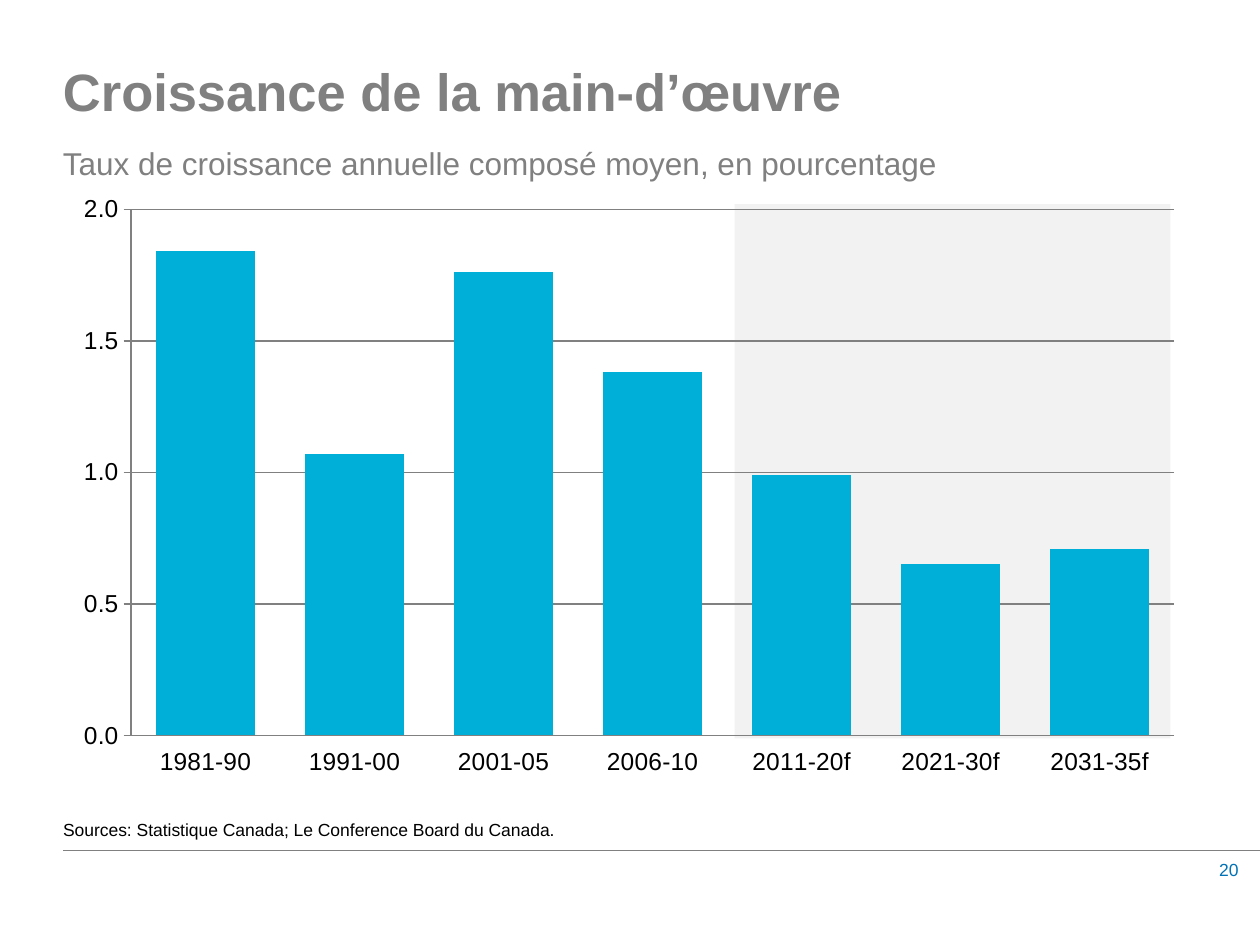
from pptx import Presentation
from pptx.chart.data import CategoryChartData
from pptx.dml.color import RGBColor
from pptx.enum.chart import XL_CHART_TYPE, XL_TICK_LABEL_POSITION, XL_TICK_MARK
from pptx.enum.shapes import MSO_CONNECTOR, MSO_SHAPE
from pptx.enum.text import MSO_ANCHOR, PP_ALIGN
from pptx.oxml import parse_xml
from pptx.oxml.ns import nsdecls
from pptx.util import Inches, Pt

GREY = "808080"
BLACK = "000000"
CATEGORIES = ["1981-90", "1991-00", "2001-05", "2006-10", "2011-20f", "2021-30f", "2031-35f"]
GROWTH = [1.84, 1.07, 1.76, 1.38, 0.99, 0.65, 0.71]


def rgb(value):
    """Turn a hex string into a colour."""
    return RGBColor.from_string(value)


def set_font(font, size, color, bold=False):
    """Format a font."""
    font.name = "Arial"
    font.size = Pt(size)
    font.bold = bold
    font.color.rgb = rgb(color)


def set_line(line, color=GREY, width=0.75):
    """Format a line."""
    line.color.rgb = rgb(color)
    line.width = Pt(width)


def add_run(p, text, size, color, bold=False):
    """Add a formatted run to a paragraph."""
    r = p.add_run()
    r.text = text
    set_font(r.font, size, color, bold)


def add_text(slide, box, text, size=10, color=BLACK, bold=False, align=PP_ALIGN.LEFT, spacing=None):
    """Add a text box without margins and return its paragraph."""
    tf = slide.shapes.add_textbox(*map(Inches, box)).text_frame
    tf.word_wrap = True
    tf.vertical_anchor = MSO_ANCHOR.TOP
    tf.margin_left = tf.margin_right = tf.margin_top = tf.margin_bottom = 0
    p = tf.paragraphs[0]
    p.alignment = align
    p.line_spacing = spacing
    add_run(p, text, size, color, bold)
    return p


def add_rule(slide, x1, x2, y):
    """Add a horizontal rule."""
    cn = slide.shapes.add_connector(MSO_CONNECTOR.STRAIGHT, Inches(x1), Inches(y), Inches(x2), Inches(y))
    set_line(cn.line)
    cn._element.spPr.append(parse_xml(f"<a:effectLst {nsdecls('a')}/>"))


def add_band(slide, box, color):
    """Add a plain filled rectangle."""
    sp = slide.shapes.add_shape(MSO_SHAPE.RECTANGLE, *map(Inches, box))
    sp.shadow.inherit = False
    sp.fill.solid()
    sp.fill.fore_color.rgb = rgb(color)
    sp.line.fill.background()


def clear_background(chart, x, y, w, h):
    """Make the chart see-through and place its plot area by fractions."""
    no_fill = f"<c:spPr {nsdecls('c', 'a')}><a:noFill/><a:ln><a:noFill/></a:ln></c:spPr>"
    root = chart._chartSpace
    root.chart.addnext(parse_xml(no_fill))
    area = root.chart.plotArea
    area.append(parse_xml(no_fill))
    for old in area.xpath("c:layout"):
        area.remove(old)
    area.insert(0, parse_xml(
        f"<c:layout {nsdecls('c')}><c:manualLayout><c:layoutTarget val='inner'/>"
        "<c:xMode val='edge'/><c:yMode val='edge'/>"
        f"<c:x val='{x}'/><c:y val='{y}'/><c:w val='{w}'/><c:h val='{h}'/>"
        "</c:manualLayout></c:layout>"))


def add_column_chart(slide, box):
    """Add the column chart of labour force growth."""
    data = CategoryChartData()
    data.categories = CATEGORIES
    data.add_series("Series 1", GROWTH)
    chart = slide.shapes.add_chart(XL_CHART_TYPE.COLUMN_CLUSTERED, *map(Inches, box), data).chart
    chart.has_legend = chart.has_title = False
    set_font(chart.font, 18, BLACK)
    plot = chart.plots[0]
    plot.gap_width = 50
    plot.vary_by_categories = False
    fill = plot.series[0].format.fill
    fill.solid()
    fill.fore_color.rgb = rgb("00AFD8")
    for axis in (chart.category_axis, chart.value_axis):
        set_font(axis.tick_labels.font, 14, BLACK)
        set_line(axis.format.line)
        axis.minor_tick_mark = XL_TICK_MARK.NONE
    chart.category_axis.major_tick_mark = XL_TICK_MARK.NONE
    chart.category_axis.tick_label_position = XL_TICK_LABEL_POSITION.LOW
    axis = chart.value_axis
    axis.major_tick_mark = XL_TICK_MARK.OUTSIDE
    axis.minimum_scale, axis.maximum_scale, axis.major_unit = 0, 2, 0.5
    axis.tick_labels.number_format = "#,##0.0"
    axis.tick_labels.number_format_is_linked = False
    set_line(axis.major_gridlines.format.line)
    clear_background(chart, 0.06, 0.04, 0.92, 0.87)


def main():
    """Build the slide and save it."""
    prs = Presentation()
    prs.slide_width, prs.slide_height = Inches(10), Inches(7.5)
    slide = prs.slides.add_slide(prs.slide_layouts[6])
    add_text(slide, (9.5, 6.82, 0.33, 0.17), "20", color="0072B5", align=PP_ALIGN.RIGHT)
    add_rule(slide, 0.5, 10, 6.75)
    add_band(slide, (5.83, 1.62, 3.46, 4.24), "F2F2F2")
    add_column_chart(slide, (0.5, 1.47, 9, 4.8))
    p = add_text(slide, (0.5, 0.5, 9, 0.97), "Croissance de la main-d’œuvre",
                 size=30, color=GREY, bold=True, spacing=Pt(34))
    p.add_line_break()
    add_run(p, "Taux de croissance annuelle composé moyen, en pourcentage", 18, GREY)
    add_text(slide, (0.5, 6.5, 8.88, 0.25), "Sources: Statistique Canada; Le Conference Board du Canada.")
    prs.save("out.pptx")


if __name__ == "__main__":
    main()
